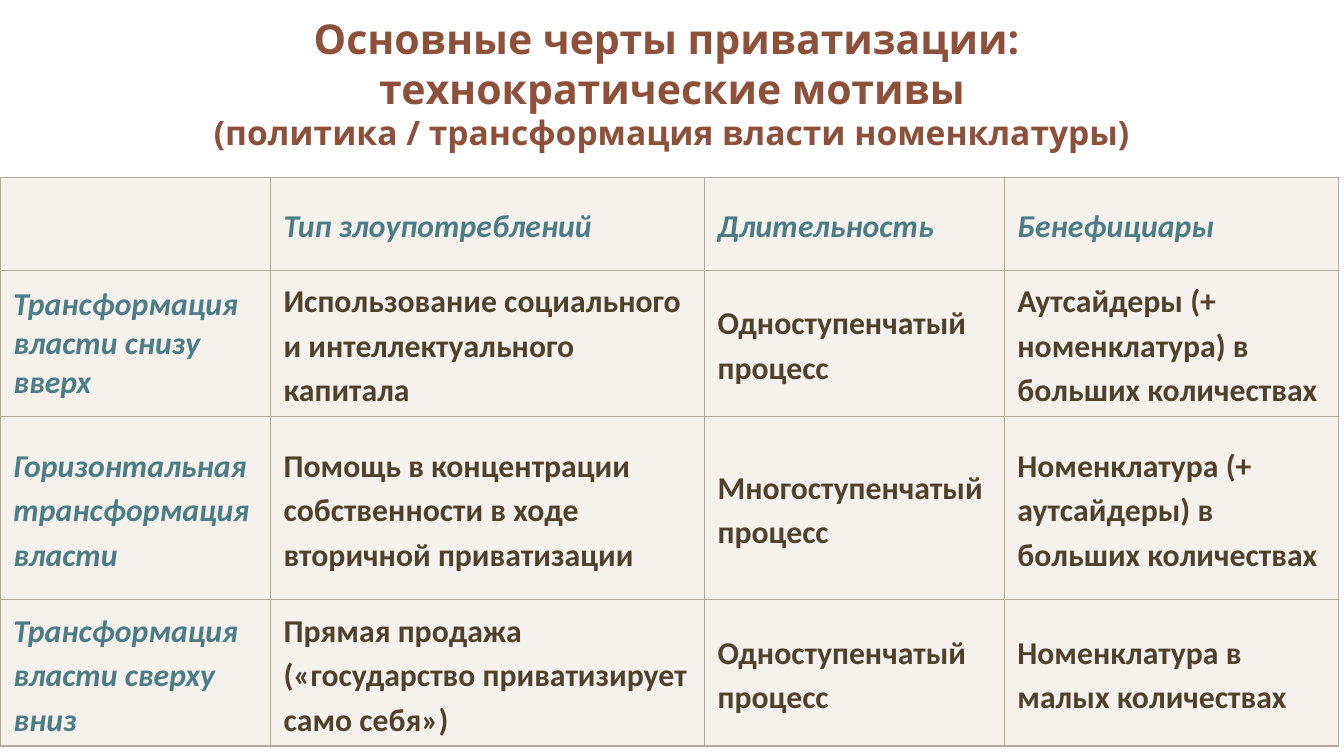
"""Builds a slide with a titled table of privatization features."""
from dataclasses import dataclass

from lxml import etree
from pptx import Presentation
from pptx.dml.color import RGBColor
from pptx.enum.text import MSO_ANCHOR, PP_ALIGN
from pptx.oxml.ns import qn
from pptx.slide import Slide
from pptx.table import Table, _Cell
from pptx.util import Inches, Pt

MIDDLE = MSO_ANCHOR.MIDDLE
CENTER = PP_ALIGN.CENTER


@dataclass(frozen=True)
class Theme:
    title_font: str = "Open Sans"
    table_font: str = "Calibri"
    title_color: str = "8D503B"
    label_color: str = "4D7C85"
    body_color: str = "50412B"
    cell_color: str = "EFEAE4"
    border_color: str = "B3A99D"
    cell_opacity: int = 60
    title_size: float = 22
    subtitle_size: float = 18
    table_size: float = 17
    outer_border: float = 1
    inner_border: float = 0.5


@dataclass(frozen=True)
class TableRow:
    height: float
    texts: tuple[str, ...]
    label_spacing: float = 1.15
    label_space_after: float = 10


THEME = Theme()
SLIDE_WIDTH = 10
TITLE_LINES = (
    ("Основные черты приватизации: ", THEME.title_size),
    ("технократические мотивы", THEME.title_size),
    ("(политика / трансформация власти номенклатуры)", THEME.subtitle_size),
)
COLUMN_WIDTHS = (2.01, 3.23, 2.23, 2.49)
ROWS = (
    TableRow(0.69, ("", "Тип злоупотреблений", "Длительность", "Бенефициары")),
    TableRow(1.09, (
        "Трансформация власти снизу вверх",
        "Использование социального и интеллектуального капитала",
        "Одноступенчатый процесс",
        "Аутсайдеры (+ номенклатура) в больших количествах",
    ), label_spacing=1, label_space_after=0),
    TableRow(1.36, (
        "Горизонтальная трансформация власти",
        "Помощь в концентрации собственности в ходе вторичной приватизации",
        "Многоступенчатый процесс",
        "Номенклатура (+ аутсайдеры) в больших количествах",
    )),
    TableRow(1.09, (
        "Трансформация власти сверху вниз",
        "Прямая продажа («государство приватизирует само себя»)",
        "Одноступенчатый процесс",
        "Номенклатура в малых количествах",
    )),
)


def add_title(page: Slide) -> None:
    box = page.shapes.add_textbox(Inches(0.12), Inches(0), Inches(9.76), Inches(1.24))
    frame = box.text_frame
    frame.word_wrap = True
    frame.vertical_anchor = MIDDLE
    para = frame.paragraphs[0]
    para.alignment = CENTER
    para.line_spacing = 1
    para.font.name = THEME.title_font
    para.font.bold = True
    para.font.color.rgb = RGBColor.from_string(THEME.title_color)
    for index, (text, size) in enumerate(TITLE_LINES):
        if index:
            para.add_line_break()
        span = para.add_run()
        span.text = text
        span.font.size = Pt(size)


def paint_cell(cell: _Cell, borders: dict[str, float]) -> None:
    cell.fill.solid()
    cell.fill.fore_color.rgb = RGBColor.from_string(THEME.cell_color)
    properties = cell._tc.get_or_add_tcPr()
    fill_color = properties.find(f"{qn('a:solidFill')}/{qn('a:srgbClr')}")
    etree.SubElement(fill_color, qn("a:alpha"), val=str(THEME.cell_opacity * 1000))
    for index, (side, width) in enumerate(borders.items()):
        line = etree.Element(qn(f"a:ln{side}"), w=str(Pt(width)))
        fill = etree.SubElement(line, qn("a:solidFill"))
        etree.SubElement(fill, qn("a:srgbClr"), val=THEME.border_color)
        properties.insert(index, line)


def write_cell(cell: _Cell, text: str, is_label: bool, spacing: float, after: float) -> None:
    cell.vertical_anchor = MIDDLE
    para = cell.text_frame.paragraphs[0]
    para.text = text
    para.line_spacing = spacing
    para.space_after = Pt(after)
    para.font.name = THEME.table_font
    para.font.size = Pt(THEME.table_size)
    para.font.bold = True
    para.font.italic = is_label
    color = THEME.label_color if is_label else THEME.body_color
    para.font.color.rgb = RGBColor.from_string(color)


def fill_table(table: Table) -> None:
    last_row, last_column = len(ROWS) - 1, len(COLUMN_WIDTHS) - 1
    for column, width in zip(table.columns, COLUMN_WIDTHS):
        column.width = Inches(width)
    for r, row in enumerate(ROWS):
        table.rows[r].height = Inches(row.height)
        for c, text in enumerate(row.texts):
            cell = table.cell(r, c)
            edges = {"L": c == 0, "R": c == last_column, "T": r == 0, "B": r == last_row}
            paint_cell(cell, {
                side: THEME.outer_border if outer else THEME.inner_border
                for side, outer in edges.items()
            })
            spacing, after = (row.label_spacing, row.label_space_after) if c == 0 else (1.15, 10)
            write_cell(cell, text, r == 0 or c == 0, spacing, after)


def add_features_table(page: Slide) -> None:
    table = page.shapes.add_table(
        len(ROWS), len(COLUMN_WIDTHS), Inches(0), Inches(1.32),
        Inches(sum(COLUMN_WIDTHS)), Inches(sum(row.height for row in ROWS)),
    ).table
    table.first_row = False
    table.horz_banding = False
    fill_table(table)


def main() -> None:
    deck = Presentation()
    deck.slide_width = Inches(SLIDE_WIDTH)
    deck.slide_height = Inches(SLIDE_WIDTH * 9 / 16)
    page = deck.slides.add_slide(deck.slide_layouts[6])
    add_title(page)
    add_features_table(page)
    deck.save("out.pptx")


if __name__ == "__main__":
    main()
